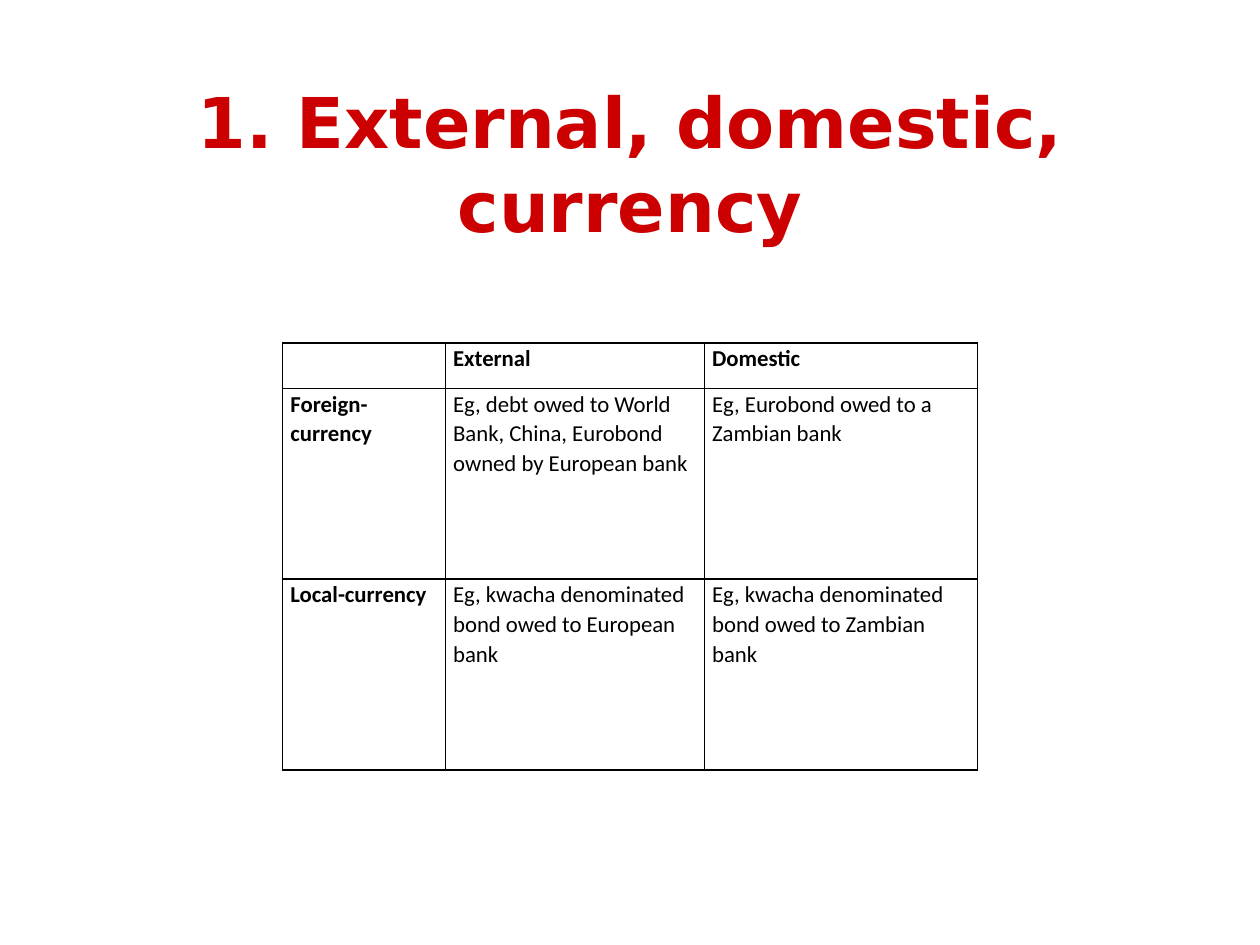
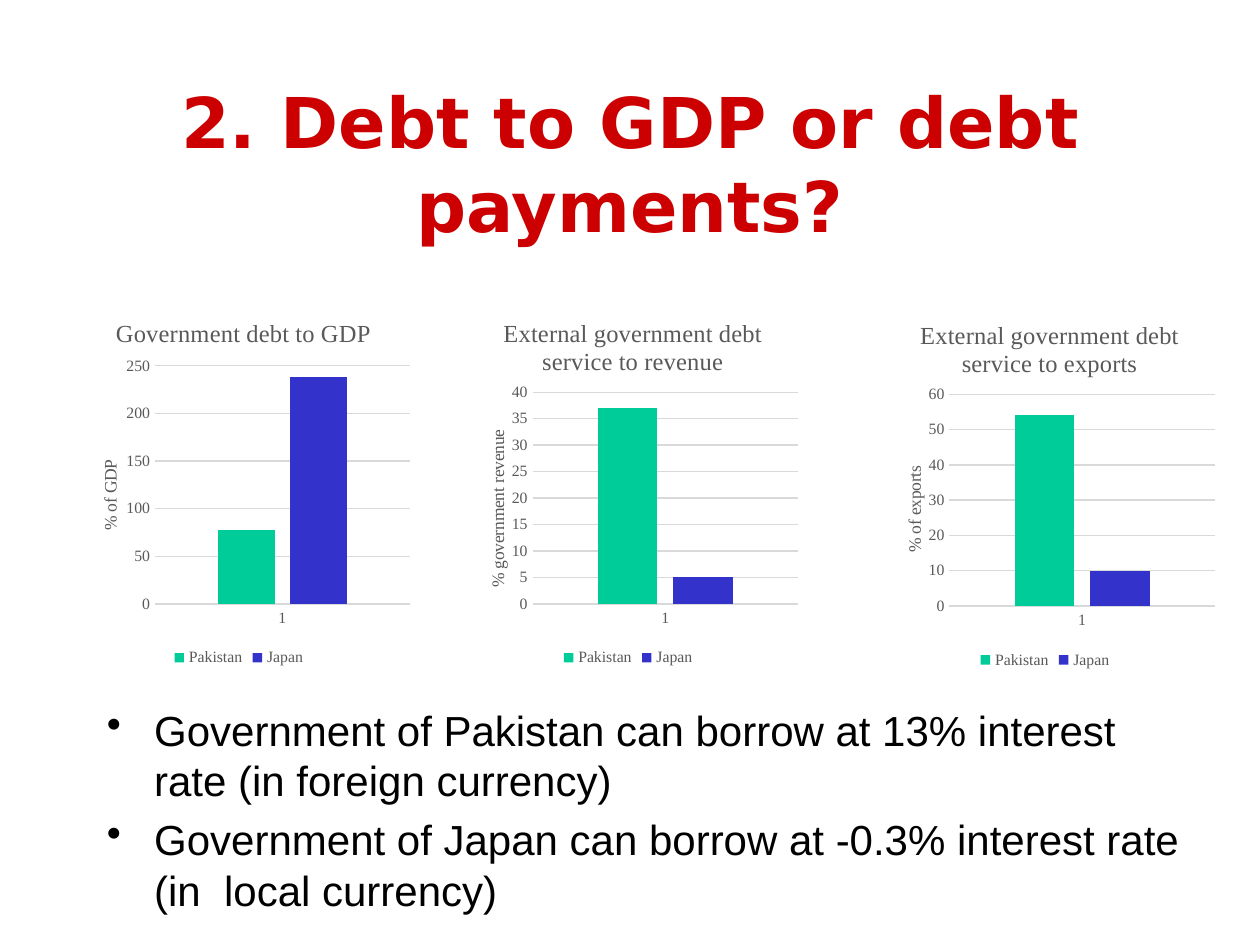
from dataclasses import dataclass

from lxml import etree
from pptx import Presentation
from pptx.chart.data import CategoryChartData
from pptx.dml.color import RGBColor
from pptx.enum import chart as charts, text
from pptx.oxml import ns
from pptx.util import Pt


@dataclass(frozen=True)
class Theme:
    title_font: str = "DejaVu Sans"
    body_font: str = "Arial"
    table_font: str = "Calibri"
    chart_font: str = "Times New Roman"
    title_size: float = 40
    body_size: float = 24
    table_size: float = 13
    chart_title_size: float = 14
    axis_title_size: float = 10
    label_size: float = 9
    red: str = "CC0000"
    black: str = "000000"
    grey: str = "595959"
    rule: str = "D9D9D9"
    green: str = "00CC99"
    blue: str = "3333CC"


@dataclass(frozen=True)
class Box:
    left: float
    top: float
    width: float
    height: float

    def lengths(self):
        return [Pt(value) for value in (self.left, self.top, self.width, self.height)]


THEME = Theme()
SLIDE_WIDTH, SLIDE_HEIGHT = 720, 540
TITLE_BOX = Box(54, 48, 612, 90)
CELL_INSET = 4.5
BULLET_INDENT = 27

DEBT_TABLE = [
    ["", "External", "Domestic"],
    [
        "Foreign-currency",
        "Eg, debt owed to World Bank, China, Eurobond owned by European bank",
        "Eg, Eurobond owed to a Zambian bank",
    ],
    [
        "Local-currency",
        "Eg, kwacha denominated bond owed to European bank",
        "Eg, kwacha denominated bond owed to Zambian bank",
    ],
]
COLUMN_WIDTHS = [93, 148, 156]
ROW_HEIGHTS = [26, 109, 109]

COUNTRIES = [("Pakistan", THEME.green), ("Japan", THEME.blue)]
DEBT_CHARTS = [
    (Box(36.7, 168, 199.5, 216), "Government debt to GDP", "% of GDP",
     [77, 238], (0.09, 0.43), (0.26, 0.19, 0.73, 0.63)),
    (Box(257.8, 168, 202.3, 216), "External government debt service to revenue",
     "% government revenue", [37, 5], (0.09, 0.35), (0.23, 0.26, 0.75, 0.56)),
    (Box(496, 169.2, 202.3, 216), "External government debt service to exports",
     "% of exports", [54, 10], (0.09, 0.44), (0.23, 0.26, 0.75, 0.56)),
]
BORROWING_POINTS = [
    "Government of Pakistan can borrow at 13% interest rate (in foreign currency)",
    "Government of Japan can borrow at -0.3% interest rate (in  local currency)",
]


def style_font(font, *, name, size, color, bold=False):
    font.name = name
    font.size = Pt(size)
    font.bold = bold
    font.color.rgb = RGBColor.from_string(color)


def write(para, words, *, align=None, line_spacing=None, space_before=None, **font):
    span = para.add_run()
    span.text = words
    style_font(span.font, **font)
    para.alignment = align
    para.line_spacing = line_spacing
    if space_before is not None:
        para.space_before = Pt(space_before)


def add_title(page, words, box=TITLE_BOX):
    frame = page.shapes.add_textbox(*box.lengths()).text_frame
    frame.word_wrap = True
    frame.vertical_anchor = text.MSO_ANCHOR.MIDDLE
    write(frame.paragraphs[0], words, align=text.PP_ALIGN.CENTER,
          name=THEME.title_font, size=THEME.title_size, color=THEME.red, bold=True)


def add_bullets(page, points, box):
    frame = page.shapes.add_textbox(*box.lengths()).text_frame
    frame.word_wrap = True
    for index, words in enumerate(points):
        para = frame.add_paragraph() if index else frame.paragraphs[0]
        write(para, words, space_before=0.2 * THEME.body_size,
              name=THEME.body_font, size=THEME.body_size, color=THEME.black)
        properties = para._p.get_or_add_pPr()
        properties.set("marL", str(Pt(BULLET_INDENT)))
        properties.set("indent", str(-Pt(BULLET_INDENT)))
        etree.SubElement(properties, ns.qn("a:buChar"), char="•")


def add_borders(cell):
    properties = cell._tc.get_or_add_tcPr()
    for side in ("lnL", "lnR", "lnT", "lnB"):
        line = etree.SubElement(properties, ns.qn(f"a:{side}"), w=str(Pt(1)))
        fill = etree.SubElement(line, ns.qn("a:solidFill"))
        etree.SubElement(fill, ns.qn("a:srgbClr"), val=THEME.black)


def add_debt_table(page, rows, box):
    table = page.shapes.add_table(len(rows), len(rows[0]), *box.lengths()).table
    table.first_row = table.horz_banding = False
    for column, width in zip(table.columns, COLUMN_WIDTHS):
        column.width = Pt(width)
    for row, height in zip(table.rows, ROW_HEIGHTS):
        row.height = Pt(height)
    for row_index, row in enumerate(rows):
        for column_index, words in enumerate(row):
            cell = table.cell(row_index, column_index)
            cell.margin_left = cell.margin_right = Pt(CELL_INSET)
            cell.margin_top = cell.margin_bottom = 0
            add_borders(cell)
            cell.fill.background()
            write(cell.text_frame.paragraphs[0], words, line_spacing=1.07,
                  name=THEME.table_font, size=THEME.table_size, color=THEME.black,
                  bold=row_index == 0 or column_index == 0)


def place_chart_part(element, position, inner=False):
    for existing in element.findall(ns.qn("c:layout")):
        element.remove(existing)
    layout = etree.Element(ns.qn("c:layout"))
    manual = etree.SubElement(layout, ns.qn("c:manualLayout"))
    settings = [("layoutTarget", "inner")] if inner else []
    settings += [("xMode", "edge"), ("yMode", "edge")]
    settings += zip("xywh", position)
    for name, value in settings:
        etree.SubElement(manual, ns.qn(f"c:{name}"), val=str(value))
    element.insert(0 if inner else 1, layout)


def write_chart_title(title, words, size, position):
    write(title.text_frame.paragraphs[0], words,
          name=THEME.chart_font, size=size, color=THEME.grey)
    place_chart_part(title._element, position)


def draw_rule(line):
    line.color.rgb = RGBColor.from_string(THEME.rule)
    line.width = Pt(0.75)


def add_debt_chart(page, box, heading, unit, values, unit_position, plot_position):
    data = CategoryChartData()
    data.categories = ["1"]
    for (country, _), value in zip(COUNTRIES, values):
        data.add_series(country, [value])
    chart = page.shapes.add_chart(
        charts.XL_CHART_TYPE.COLUMN_CLUSTERED, *box.lengths(), data).chart
    label = dict(name=THEME.chart_font, size=THEME.label_size, color=THEME.grey)
    style_font(chart.font, **label)

    chart.has_title = True
    write_chart_title(chart.chart_title, heading, THEME.chart_title_size, (0.135, 0.05))
    chart.chart_title.include_in_layout = False
    chart.has_legend = True
    chart.legend.position = charts.XL_LEGEND_POSITION.BOTTOM
    chart.legend.include_in_layout = False
    style_font(chart.legend.font, **label)

    for axis in (chart.category_axis, chart.value_axis):
        axis.major_tick_mark = axis.minor_tick_mark = charts.XL_TICK_MARK.NONE
        style_font(axis.tick_labels.font, **label)
    draw_rule(chart.category_axis.format.line)
    value_axis = chart.value_axis
    value_axis.format.line.fill.background()
    draw_rule(value_axis.major_gridlines.format.line)
    value_axis.has_title = True
    write_chart_title(value_axis.axis_title, unit, THEME.axis_title_size, unit_position)
    value_axis.axis_title.text_frame._txBody.bodyPr.set("rot", "-5400000")

    plot = chart.plots[0]
    plot.vary_by_categories = False
    plot.gap_width = 219
    plot.overlap = -27
    for series, (_, color) in zip(plot.series, COUNTRIES):
        series.format.fill.solid()
        series.format.fill.fore_color.rgb = RGBColor.from_string(color)
    place_chart_part(chart._chartSpace.chart.plotArea, plot_position, inner=True)


def add_currency_page(deck):
    page = deck.slides.add_slide(deck.slide_layouts[6])
    add_title(page, "1. External, domestic, currency")
    add_debt_table(page, DEBT_TABLE,
                   Box(161.5, 196, sum(COLUMN_WIDTHS), sum(ROW_HEIGHTS)))


def add_payments_page(deck):
    page = deck.slides.add_slide(deck.slide_layouts[6])
    add_title(page, "2. Debt to GDP or debt payments?")
    add_bullets(page, BORROWING_POINTS, Box(54, 399, 635, 104))
    for debt_chart in DEBT_CHARTS:
        add_debt_chart(page, *debt_chart)


def main():
    deck = Presentation()
    deck.slide_width, deck.slide_height = Pt(SLIDE_WIDTH), Pt(SLIDE_HEIGHT)
    add_currency_page(deck)
    add_payments_page(deck)
    deck.save("out.pptx")


if __name__ == "__main__":
    main()
